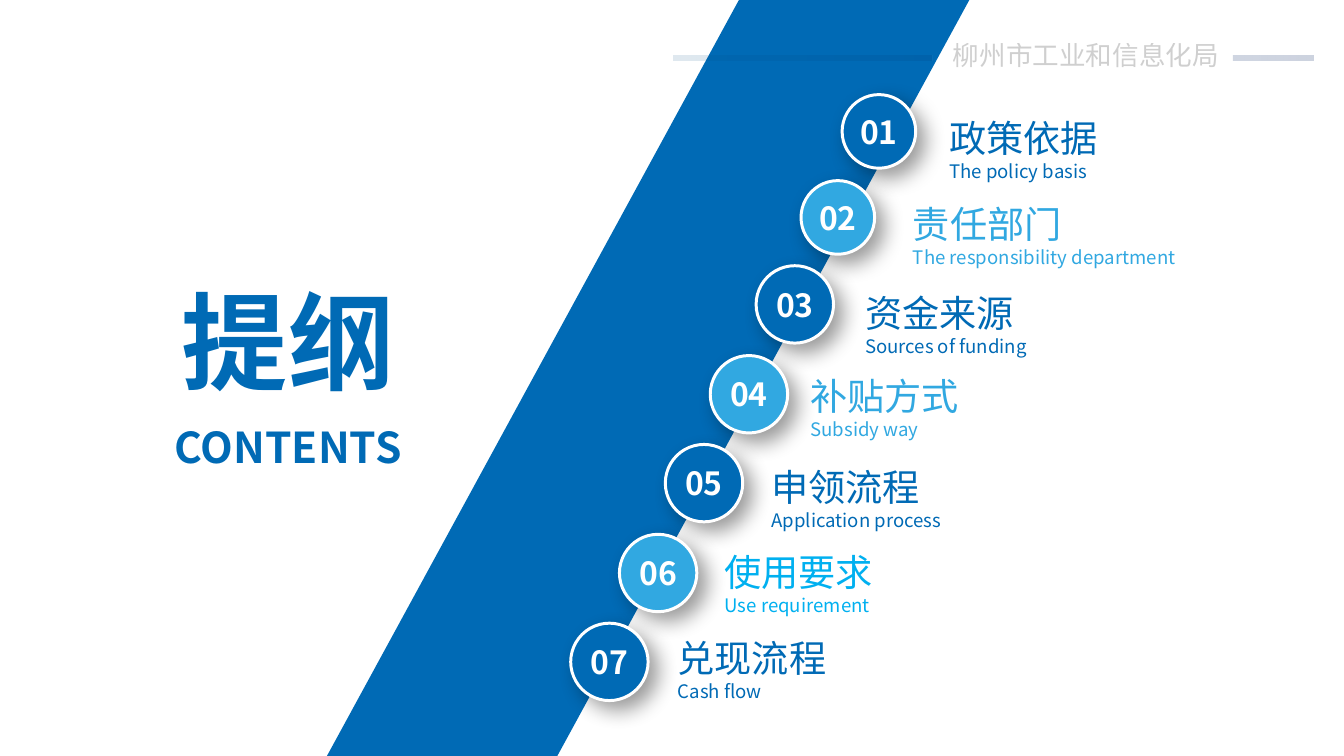
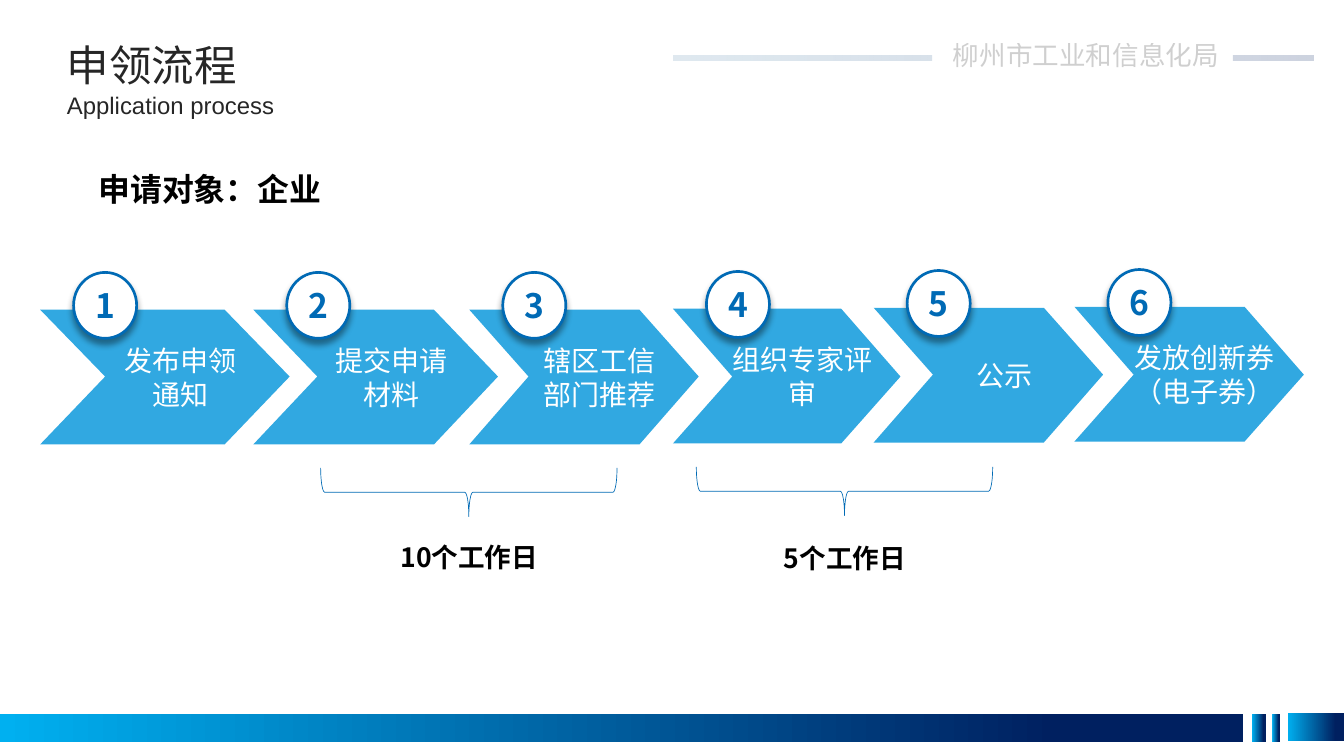
from lxml import etree
from pptx import Presentation
from pptx.dml.color import RGBColor
from pptx.enum.shapes import MSO_SHAPE
from pptx.enum.text import MSO_ANCHOR, MSO_AUTO_SIZE, PP_ALIGN
from pptx.oxml.ns import qn
from pptx.util import Inches, Pt

OVAL, RECT, BRACE = MSO_SHAPE.OVAL, MSO_SHAPE.RECTANGLE, MSO_SHAPE.LEFT_BRACE
TOP, MID = MSO_ANCHOR.TOP, MSO_ANCHOR.MIDDLE
LEFT, MIDDLE = PP_ALIGN.LEFT, PP_ALIGN.CENTER
GROW = MSO_AUTO_SIZE.SHAPE_TO_FIT_TEXT

WIDE, HIGH = 14.06, 7.91
SANS, SANS_JP, ARIAL = "Noto Sans CJK SC", "Noto Sans CJK JP", "Arial"
BLUE, SKY, CYAN, NAVY = "006AB5", "31A8E1", "00B0F0", "002060"
STEEL, WHITE, BLACK, DARK = "005088", "FFFFFF", "000000", "262626"
PAD = (0.1, 0.05, 0.1, 0.05)
FLAT = (0, 0, 0, 0)

BUREAU = "柳州市工业和信息化局"
DASHES = [(12.89, 13.74), (7.05, 9.75)]
FOOT = [(0, 7.47, 13), (13.1, 7.47, 0.14), (13.31, 7.47, 0.08), (13.47, 7.46, 0.59)]

TOPICS = [
    ("政策依据", "The policy basis", BLUE, (8.81, 0.99, 0.77), (9.93, 1.2, 3.71)),
    ("责任部门", "The responsibility department", SKY, (8.38, 1.89, 0.77), (9.55, 2.1, 3.71)),
    ("资金来源", "Sources of funding", BLUE, (7.91, 2.78, 0.81), (9.05, 3.03, 2.46)),
    ("补贴方式", "Subsidy way", SKY, (7.43, 3.72, 0.81), (8.48, 3.9, 2.46)),
    ("申领流程", "Application process", BLUE, (6.96, 4.65, 0.81), (8.07, 4.85, 2.46)),
    ("使用要求", "Use requirement", CYAN, (6.48, 5.59, 0.81), (7.58, 5.74, 2.46)),
    ("兑现流程", "Cash flow", BLUE, (5.97, 6.52, 0.81), (7.09, 6.64, 2.46)),
]

STEPS = [
    ("发布申领\n通知", 0.42, 3.24, 2.61),
    ("提交申请\n材料", 2.65, 3.24, 2.56),
    ("辖区工信\n部门推荐", 4.91, 3.24, 2.4),
    ("组织专家评审", 7.04, 3.23, 2.38),
    ("公示", 9.14, 3.22, 2.4),
    ("发放创新券\n（电子券）", 11.24, 3.21, 2.4),
]
TALL, TIP = 1.41, 0.26

SPANS = [("10个工作日", 4.65, 3.6, 5.61), ("5个工作日", 8.58, 3.59, 5.62)]


def rgb(code):
    return RGBColor.from_string(code)


def box(*lengths):
    return [Inches(v) for v in lengths]


def fade(root, shares):
    for tint, share in zip(root.iter(qn("a:srgbClr")), shares):
        etree.SubElement(tint, qn("a:alpha"), val=str(share * 1000))


def write(shape, text, sizes, color, font=SANS, bold=False, align=LEFT,
          anchor=TOP, pad=FLAT, grow=False):
    frame = shape.text_frame
    frame.text = text
    frame.word_wrap = True
    frame.vertical_anchor = anchor
    (frame.margin_left, frame.margin_top,
     frame.margin_right, frame.margin_bottom) = box(*pad)
    if grow:
        frame.auto_size = GROW
    for i, para in enumerate(frame.paragraphs):
        para.alignment = align
        for run in para.runs:
            run.font.size = Pt(sizes[min(i, len(sizes) - 1)])
            run.font.bold = bold
            run.font.name = font
            run.font.color.rgb = rgb(color)
            east = SANS if font == ARIAL else font
            etree.SubElement(run.font._element, qn("a:ea"), typeface=east)


def label(slide, place, text, sizes, color, **style):
    shape = slide.shapes.add_textbox(*box(*place))
    write(shape, text, sizes, color, grow=True, **style)
    return shape


def paint(shape, fill=None, line=None, width=1):
    shape.shadow.inherit = False
    if fill:
        shape.fill.solid()
        shape.fill.fore_color.rgb = rgb(fill)
    else:
        shape.fill.background()
    if line:
        shape.line.color.rgb = rgb(line)
        shape.line.width = Pt(width)
    else:
        shape.line.fill.background()


def blend(shape, stops):
    paint(shape)
    shape.fill.gradient()
    shape.fill.gradient_angle = 0
    for stop, (spot, color) in zip(shape.fill.gradient_stops, stops):
        stop.position = spot
        stop.color.rgb = rgb(color)


def outline(slide, *loops):
    pen = None
    for loop in loops:
        dots = [(x * 100, y * 100) for x, y in loop]
        if pen is None:
            pen = slide.shapes.build_freeform(*dots[0], scale=9144)
        else:
            pen.move_to(*dots[0])
        pen.add_line_segments(dots[1:], close=True)
    return pen.convert_to_shape()


def badge(slide, place, text, size, fill, line, ink, width, glow):
    disc = slide.shapes.add_shape(OVAL, *box(*place))
    paint(disc, fill, line, width)
    blur, dist, turn = glow
    cast = etree.SubElement(
        disc._element.spPr.find(qn("a:effectLst")), qn("a:outerShdw"),
        blurRad=str(Pt(blur)), dist=str(Pt(dist)), dir=str(turn * 60000),
        algn="ctr", rotWithShape="0")
    etree.SubElement(cast, qn("a:srgbClr"), val=BLACK)
    fade(cast, [40])
    write(disc, text, [size], ink, bold=True, align=MIDDLE, anchor=MID)


def header(slide):
    name = label(slide, (9.87, 0.36, 3.07, 0.44), BUREAU, [20], BLACK,
                 font=SANS_JP, pad=PAD)
    fade(name._element, [19])
    dash = outline(slide, *[[(a, 0.58), (b, 0.58), (b, 0.63), (a, 0.63)]
                            for a, b in DASHES])
    blend(dash, [(0, STEEL), (1, NAVY)])
    fade(dash._element.spPr, [13, 20])


def footer(slide):
    for x, y, wide in FOOT:
        bar = slide.shapes.add_shape(RECT, *box(x, y, wide, 0.29))
        blend(bar, [(0, CYAN), (0.85, NAVY)])


def contents(slide):
    label(slide, (1.33, 2.88, 3.37, 1.35), "提纲", [80], BLUE,
          bold=True, align=MIDDLE, anchor=MID)
    label(slide, (1.21, 4.41, 3.61, 0.54), "CONTENTS", [32], BLUE,
          bold=True, align=MIDDLE)
    band = outline(slide, [(10.14, 0), (7.73, 0), (3.42, HIGH), (5.83, HIGH)])
    paint(band, BLUE)
    header(slide)
    for i, (name, gloss, color, (x, y, size), place) in enumerate(TOPICS):
        badge(slide, (x, y, size, size), f"{i + 1:02}", 24,
              SKY if i % 2 else BLUE, WHITE, WHITE, 2.25, (16, 9, 45))
        label(slide, (*place, 0.71), f"{name}\n{gloss}", [28, 14], color, anchor=MID)


def process(slide):
    name, gloss = TOPICS[4][:2]
    label(slide, (0.7, 0.41, 3.91, 0.54), name, [32], DARK, font=ARIAL)
    label(slide, (0.7, 0.95, 3.91, 0.3), gloss, [18], DARK, font=ARIAL)
    footer(slide)
    header(slide)
    label(slide, (0.93, 1.73, 3.59, 0.5), "申请对象：企业", [24], BLACK,
          bold=True, pad=PAD)
    for i, (text, x, y, wide) in enumerate(STEPS, 1):
        tip, end, mid, low = TIP * wide, x + wide, y + TALL / 2, y + TALL
        arrow = outline(slide, [(x, y), (end - tip, y), (end, mid),
                                (end - tip, low), (x, low), (x + tip, mid)])
        paint(arrow, SKY)
        write(arrow, text, [21.1], WHITE, align=MIDDLE, anchor=MID,
              pad=(0.62, 0, 0.29, 0))
        badge(slide, (x + 0.35, y - 0.39, 0.66, 0.69), str(i), 25.3,
              WHITE, BLUE, BLUE, 2, (5, 4, 90))
    for text, x, y, low in SPANS:
        brace = slide.shapes.add_shape(BRACE, *box(x, y, 0.51, 3.1))
        brace.rotation = 270
        paint(brace, line=BLUE, width=0.5)
        label(slide, (x - 0.82, low, 2.16, 0.44), text, [20], BLACK,
              bold=True, align=MIDDLE, pad=PAD)


def main():
    deck = Presentation()
    deck.slide_width, deck.slide_height = box(WIDE, HIGH)
    for build in (contents, process):
        build(deck.slides.add_slide(deck.slide_layouts[6]))
    deck.save("out.pptx")


if __name__ == "__main__":
    main()
